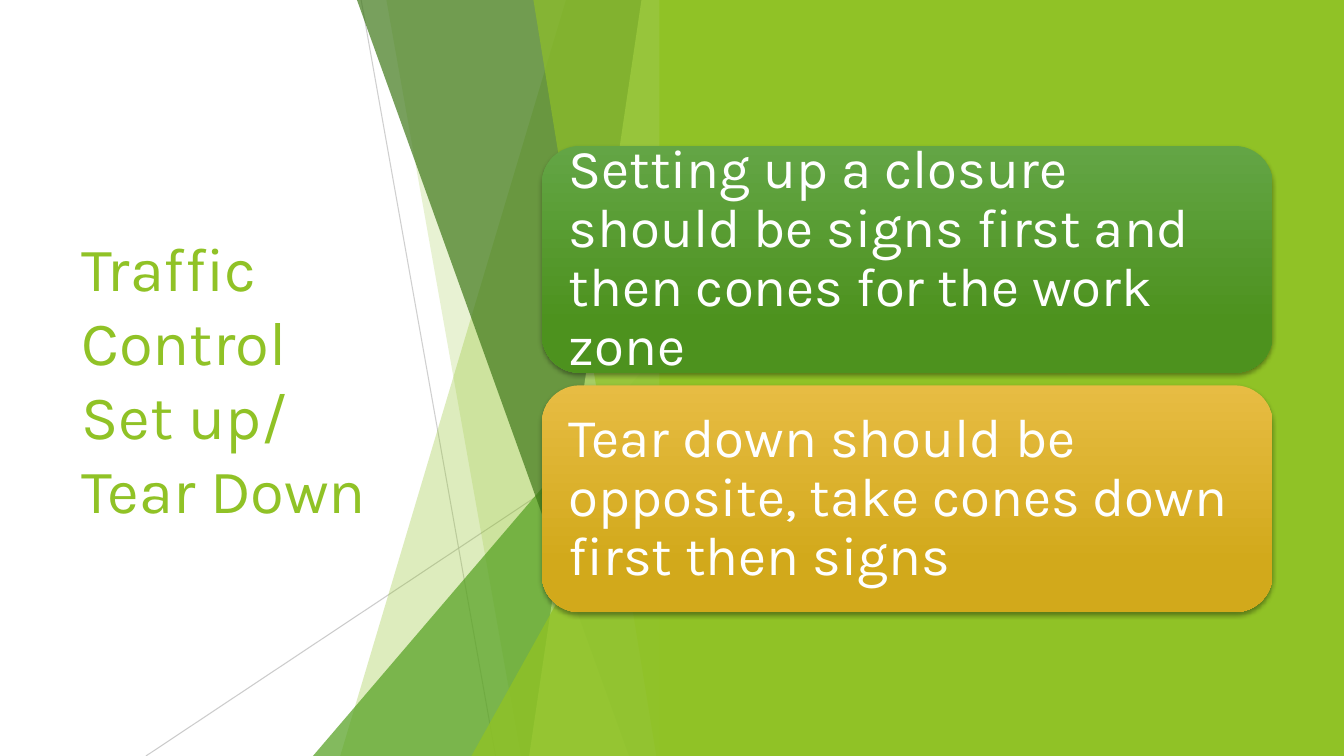
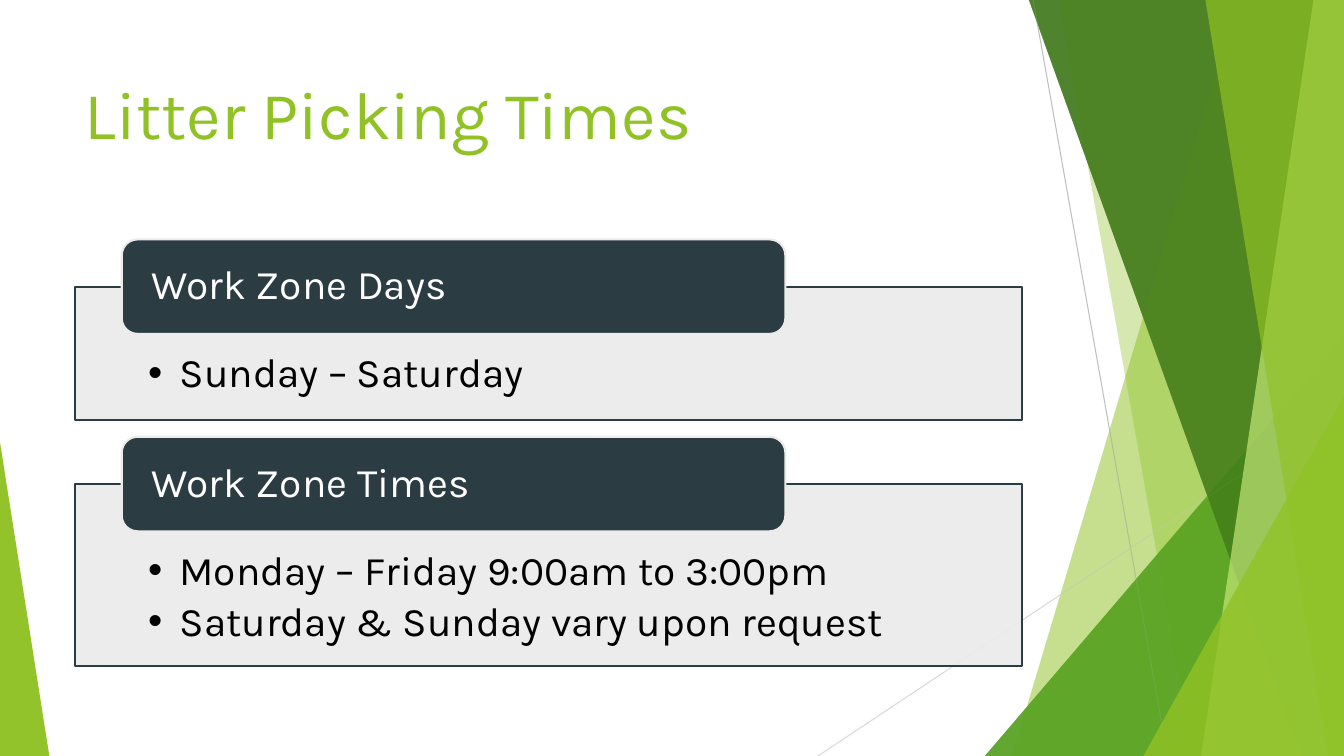
from lxml.etree import SubElement
from pptx import Presentation
from pptx.dml.color import RGBColor
from pptx.enum.shapes import MSO_CONNECTOR as CONNECTOR, MSO_SHAPE as SHAPE
from pptx.enum.text import MSO_ANCHOR as ANCHOR, MSO_AUTO_SIZE as AUTO_SIZE, PP_ALIGN as ALIGN
from pptx.oxml.ns import qn
from pptx.util import Pt

# Shared measures and colours
PX = 9525
WIDTH, HEIGHT = 1280, 720
FONT = "Karla"
LIME, GREEN, FOREST, PALE = "90C226", "54A021", "3F7819", "C0E474"
SLATE, SILVER, GREY = "2C3C43", "EBEBEB", "BFBFBF"
WHITE, BLACK = "FFFFFF", "000000"

# Facets: a band has its top and bottom left x, a wedge its left and top
FACETS = [
    ("band", 1179, 964, LIME, 30),
    ("band", 1008, 1136, LIME, 20),
    ("wedge", 938, 320, GREEN, 72),
    ("band", 980, 1239, FOREST, 70),
    ("band", 1251, 1144, PALE, 70),
    ("band", 1148, 1265, LIME, 65),
    ("wedge", 1089, 377, LIME, 80),
]
RAYS = [(984, 0, 1112, 720), (1280, 387, 779, 720)]


def paint(fill, color, opacity=100):
    fill.solid()
    fill.fore_color.rgb = RGBColor.from_string(color)
    if opacity < 100:
        solid = fill._xPr.find(qn("a:solidFill"))
        SubElement(solid[0], qn("a:alpha"), val=str(opacity * 1000))


def write(paragraph, text, size, color):
    run = paragraph.add_run()
    run.text = text
    run.font.name = FONT
    run.font.size = Pt(size)
    paint(run.font.fill, color)
    paragraph.alignment = ALIGN.LEFT


presentation = Presentation()
presentation.slide_width, presentation.slide_height = WIDTH * PX, HEIGHT * PX
setup_slide = presentation.slides.add_slide(presentation.slide_layouts[5])
times_slide = presentation.slides.add_slide(presentation.slide_layouts[3])

# Titles
titles = [
    (setup_slide, (68, 145, 372, 430), ANCHOR.MIDDLE, 44,
     ["Traffic Control ", "Set up/", "Tear Down"]),
    (times_slide, (71, 64, 902, 138), ANCHOR.TOP, 48, ["Litter Picking Times"]),
]
for slide, box, anchor, size, lines in titles:
    title = slide.shapes.title
    title.left, title.top, title.width, title.height = [value * PX for value in box]
    frame = title.text_frame
    frame.auto_size = AUTO_SIZE.NONE
    frame.vertical_anchor = anchor
    paragraph = frame.paragraphs[0]
    for index, line in enumerate(lines):
        if index:
            paragraph.add_line_break()
        write(paragraph, line, size, LIME)

# Faceted decoration, layer by layer
decorations = [
    (setup_slide, 640, ["rays", "facets"], [(GREY, 75), (GREY, 80)]),
    (times_slide, 0, ["facets", "rays", "facets"], [(GREY, 100), ("D9D9D9", 100)]),
]
for slide, shift, layers, strokes in decorations:
    right = WIDTH - shift
    for layer in layers:
        if layer == "rays":
            for (x1, y1, x2, y2), (color, opacity) in zip(RAYS, strokes):
                ray = slide.shapes.add_connector(
                    CONNECTOR.STRAIGHT, (x1 - shift) * PX, y1 * PX, (x2 - shift) * PX, y2 * PX)
                ray.line.width = Pt(0.75)
                paint(ray.line.fill, color, opacity)
                SubElement(ray.element.spPr, qn("a:effectLst"))
            continue
        for kind, first, second, color, opacity in FACETS:
            left = first - shift
            if kind == "band":
                builder = slide.shapes.build_freeform(left, 0, scale=PX)
                builder.add_line_segments(
                    [(right, 0), (right, HEIGHT), (second - shift, HEIGHT)], close=True)
                facet = builder.convert_to_shape()
            else:
                facet = slide.shapes.add_shape(
                    SHAPE.ISOSCELES_TRIANGLE, left * PX, second * PX,
                    (right - left) * PX, (HEIGHT - second) * PX)
                facet.adjustments[0] = 1
            facet.shadow.inherit = False
            facet.line.fill.background()
            paint(facet.fill, color, opacity)

# Setup slide: lime side and two gradient cards
side = setup_slide.shapes.add_shape(SHAPE.RECTANGLE, 628 * PX, 0, 652 * PX, HEIGHT * PX)
side.shadow.inherit = False
side.line.fill.background()
paint(side.fill, LIME)

cards = [
    ("63A545", "4D921E",
     "Setting up a closure should be signs first and then cones for the work zone"),
    ("E7BC43", "D2A91B",
     "Tear down should be opposite, take cones down first then signs"),
]
for index, (light, dark, text) in enumerate(cards):
    card = setup_slide.shapes.add_shape(
        SHAPE.ROUNDED_RECTANGLE, 516 * PX, (139 + 228 * index) * PX, 696 * PX, 216 * PX)
    card.line.fill.background()
    card.fill.gradient()
    card.fill.gradient_angle = 270
    for stop, position, color in zip(card.fill.gradient_stops, (0, 0.78), (light, dark)):
        stop.position = position
        stop.color.rgb = RGBColor.from_string(color)
    card.shadow.inherit = False
    effects = card.element.spPr.find(qn("a:effectLst"))
    shadow = SubElement(effects, qn("a:outerShdw"), blurRad=str(Pt(3)), dist=str(Pt(2)),
                        dir="5400000", rotWithShape="0")
    shadow_color = SubElement(shadow, qn("a:srgbClr"), val=BLACK)
    SubElement(shadow_color, qn("a:alpha"), val="35000")
    frame = card.text_frame
    frame.word_wrap = True
    frame.vertical_anchor = ANCHOR.MIDDLE
    frame.margin_left = frame.margin_right = frame.margin_top = frame.margin_bottom = 15 * PX
    frame.paragraphs[0].line_spacing = 0.9
    write(frame.paragraphs[0], text, 39, WHITE)

# Times slide: corner wedge at the left
corner = times_slide.shapes.add_shape(
    SHAPE.ISOSCELES_TRIANGLE, 0, 421 * PX, 47 * PX, 299 * PX)
corner.adjustments[0] = 0
corner.shadow.inherit = False
corner.line.fill.background()
paint(corner.fill, LIME, 98)

# Times slide: list panels, each with a heading across its top edge
panels = [
    (273, 127, "Work Zone Days", ["Sunday – Saturday"]),
    (461, 173, "Work Zone Times",
     ["Monday – Friday 9:00am to 3:00pm", "Saturday & Sunday vary upon request"]),
]
bodies = list(times_slide.placeholders)[1:]
for panel, (top, height, heading_text, items) in zip(bodies, panels):
    panel.element.getparent().append(panel.element)
    panel.left, panel.top, panel.width, panel.height = 71 * PX, top * PX, 902 * PX, height * PX
    paint(panel.fill, SILVER, 90)
    paint(panel.line.fill, SLATE)
    panel.line.width = Pt(1.5)
    frame = panel.text_frame
    frame.auto_size = AUTO_SIZE.NONE
    frame.vertical_anchor = ANCHOR.TOP
    frame.margin_left = frame.margin_right = 70 * PX
    frame.margin_top, frame.margin_bottom = 63 * PX, 22 * PX
    for index, item in enumerate(items):
        paragraph = frame.add_paragraph() if index else frame.paragraphs[0]
        paragraph.line_spacing = 0.9
        paragraph.space_before, paragraph.space_after = Pt(0), Pt(5)
        properties = paragraph._p.get_or_add_pPr()
        properties.set("marL", str(30 * PX))
        properties.set("indent", str(-30 * PX))
        write(paragraph, item, 29, BLACK)

    heading = times_slide.shapes.add_shape(
        SHAPE.ROUNDED_RECTANGLE, 116 * PX, (top - 45) * PX, 632 * PX, 90 * PX)
    heading.shadow.inherit = False
    paint(heading.fill, SLATE)
    paint(heading.line.fill, SILVER)
    heading.line.width = Pt(1.5)
    frame = heading.text_frame
    frame.word_wrap = True
    frame.vertical_anchor = ANCHOR.MIDDLE
    frame.margin_left = frame.margin_right = 24 * PX
    frame.margin_top = frame.margin_bottom = 0
    frame.paragraphs[0].line_spacing = 0.9
    write(frame.paragraphs[0], heading_text, 29, WHITE)

presentation.save("out.pptx")
